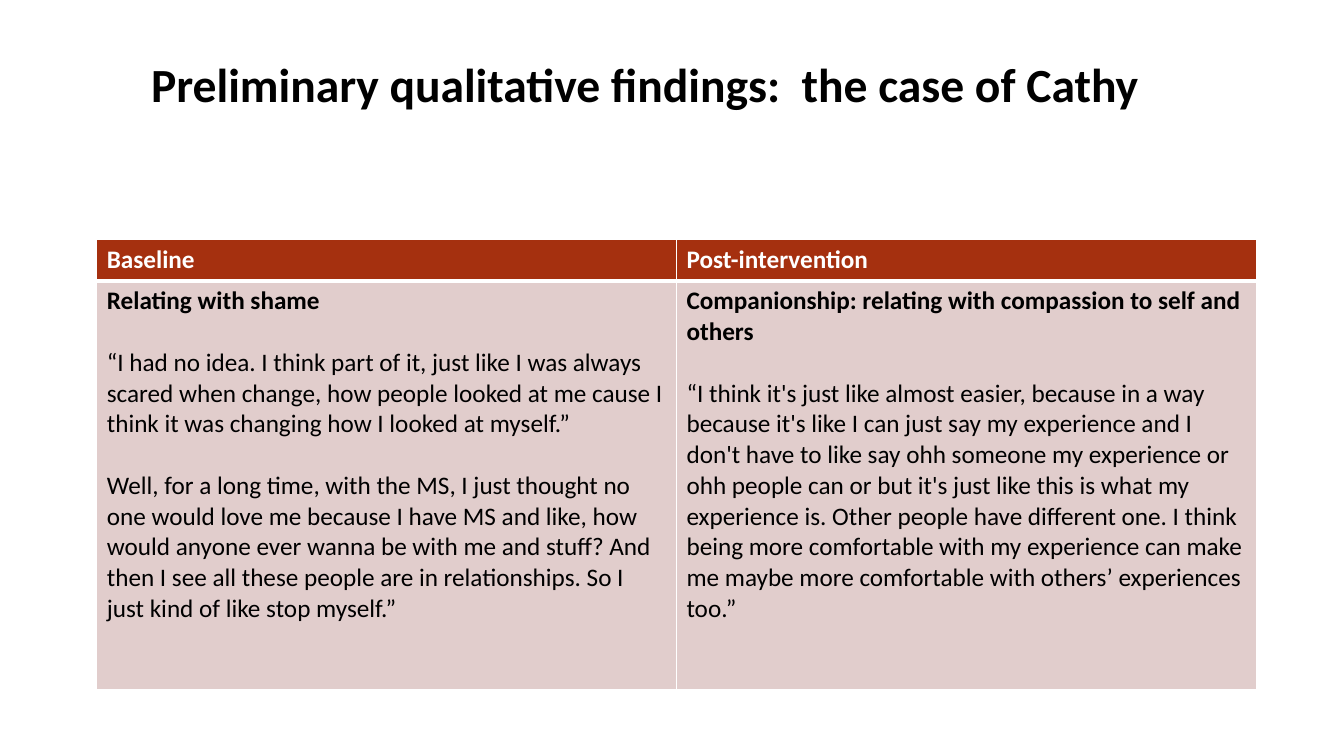
from dataclasses import dataclass

from lxml import etree
from pptx import Presentation
from pptx.dml.color import RGBColor
from pptx.enum.text import MSO_ANCHOR, PP_ALIGN
from pptx.oxml.ns import qn
from pptx.slide import Slide
from pptx.table import _Cell
from pptx.text.text import _Paragraph
from pptx.util import Inches, Pt

CENTER = PP_ALIGN.CENTER
MIDDLE = MSO_ANCHOR.MIDDLE
SLIDE_WIDTH, SLIDE_HEIGHT = Inches(13.33), Inches(7.5)
FONT = "Calibri"
BLACK, WHITE, RUST, BLUSH = "000000", "FFFFFF", "A5300F", "E1CDCC"
BLANK_LAYOUT = 6
BODY_SIZE = Pt(18)
PARAGRAPH_GAP = Pt(22)
THIN, THICK = Pt(1), Pt(3)
HEADER_SHARE, BODY_SHARE = 5.4, 54.13


@dataclass(frozen=True)
class Area:
    """A rectangle in percent of the slide's width and height."""
    left: float
    top: float
    width: float
    height: float

    def lengths(self) -> tuple[int, int, int, int]:
        return (across(self.left), down(self.top),
                across(self.width), down(self.height))


@dataclass(frozen=True)
class Finding:
    """One column of the table: a stage, its theme and the quotes for it."""
    stage: str
    theme: str
    quotes: tuple[str, ...]


TITLE = "Preliminary qualitative findings:  the case of Cathy"
TITLE_AREA = Area(2.48, 6.8, 91, 9.33)
TABLE_AREA = Area(7.2, 31.73, 86.27, HEADER_SHARE + BODY_SHARE)
FINDINGS = (
    Finding("Baseline", "Relating with shame", (
        "“I had no idea. I think part of it, just like I was always scared when "
        "change, how people looked at me cause I think it was changing how I "
        "looked at myself.”",
        "Well, for a long time, with the MS, I just thought no one would love me "
        "because I have MS and like, how would anyone ever wanna be with me and "
        "stuff? And then I see all these people are in relationships. So I just "
        "kind of like stop myself.”",
    )),
    Finding("Post-intervention",
            "Companionship: relating with compassion to self and others", (
        "“I think it's just like almost easier, because in a way because it's "
        "like I can just say my experience and I don't have to like say ohh "
        "someone my experience or ohh people can or but it's just like this is "
        "what my experience is. Other people have different one. I think being "
        "more comfortable with my experience can make me maybe more comfortable "
        "with others’ experiences too.”",
    )),
)


def across(percent: float) -> int:
    return round(SLIDE_WIDTH * percent / 100)


def down(percent: float) -> int:
    return round(SLIDE_HEIGHT * percent / 100)


def color(value: str) -> RGBColor:
    return RGBColor.from_string(value)


def write(para: _Paragraph, text: str, ink: str, size: int = BODY_SIZE,
          bold: bool = True) -> None:
    span = para.add_run()
    span.text = text
    span.font.color.rgb = color(ink)
    for name, value in {"name": FONT, "size": size, "bold": bold}.items():
        setattr(span.font, name, value)


def style_cell(cell: _Cell, fill: str, top: int, bottom: int) -> None:
    """Give the cell white borders, then its fill."""
    properties = cell._tc.get_or_add_tcPr()
    widths = {"a:lnL": THIN, "a:lnR": THIN, "a:lnT": top, "a:lnB": bottom}
    for tag, width in widths.items():
        line = etree.SubElement(properties, qn(tag), w=str(int(width)))
        solid = etree.SubElement(line, qn("a:solidFill"))
        etree.SubElement(solid, qn("a:srgbClr"), val=WHITE)
    cell.fill.solid()
    cell.fill.fore_color.rgb = color(fill)


def add_title(page: Slide) -> None:
    box = page.shapes.add_textbox(*TITLE_AREA.lengths())
    frame = box.text_frame
    frame.word_wrap = True
    frame.vertical_anchor = MIDDLE
    para = frame.paragraphs[0]
    para.alignment = CENTER
    para.line_spacing = 0.9
    write(para, TITLE, BLACK, Pt(34))


def add_findings(page: Slide) -> None:
    table = page.shapes.add_table(2, len(FINDINGS), *TABLE_AREA.lengths()).table
    table.horz_banding = False
    for row, share in zip(table.rows, (HEADER_SHARE, BODY_SHARE)):
        row.height = down(share)
    for column, finding in enumerate(FINDINGS):
        header, body = table.cell(0, column), table.cell(1, column)
        style_cell(header, RUST, THIN, THICK)
        style_cell(body, BLUSH, THICK, THIN)
        write(header.text_frame.paragraphs[0], finding.stage, WHITE)
        write(body.text_frame.paragraphs[0], finding.theme, BLACK)
        for quote in finding.quotes:
            para = body.text_frame.add_paragraph()
            para.space_before = PARAGRAPH_GAP
            write(para, quote, BLACK, bold=False)


def main() -> None:
    deck = Presentation()
    deck.slide_width, deck.slide_height = SLIDE_WIDTH, SLIDE_HEIGHT
    page = deck.slides.add_slide(deck.slide_layouts[BLANK_LAYOUT])
    add_title(page)
    add_findings(page)
    deck.save("out.pptx")


if __name__ == "__main__":
    main()
